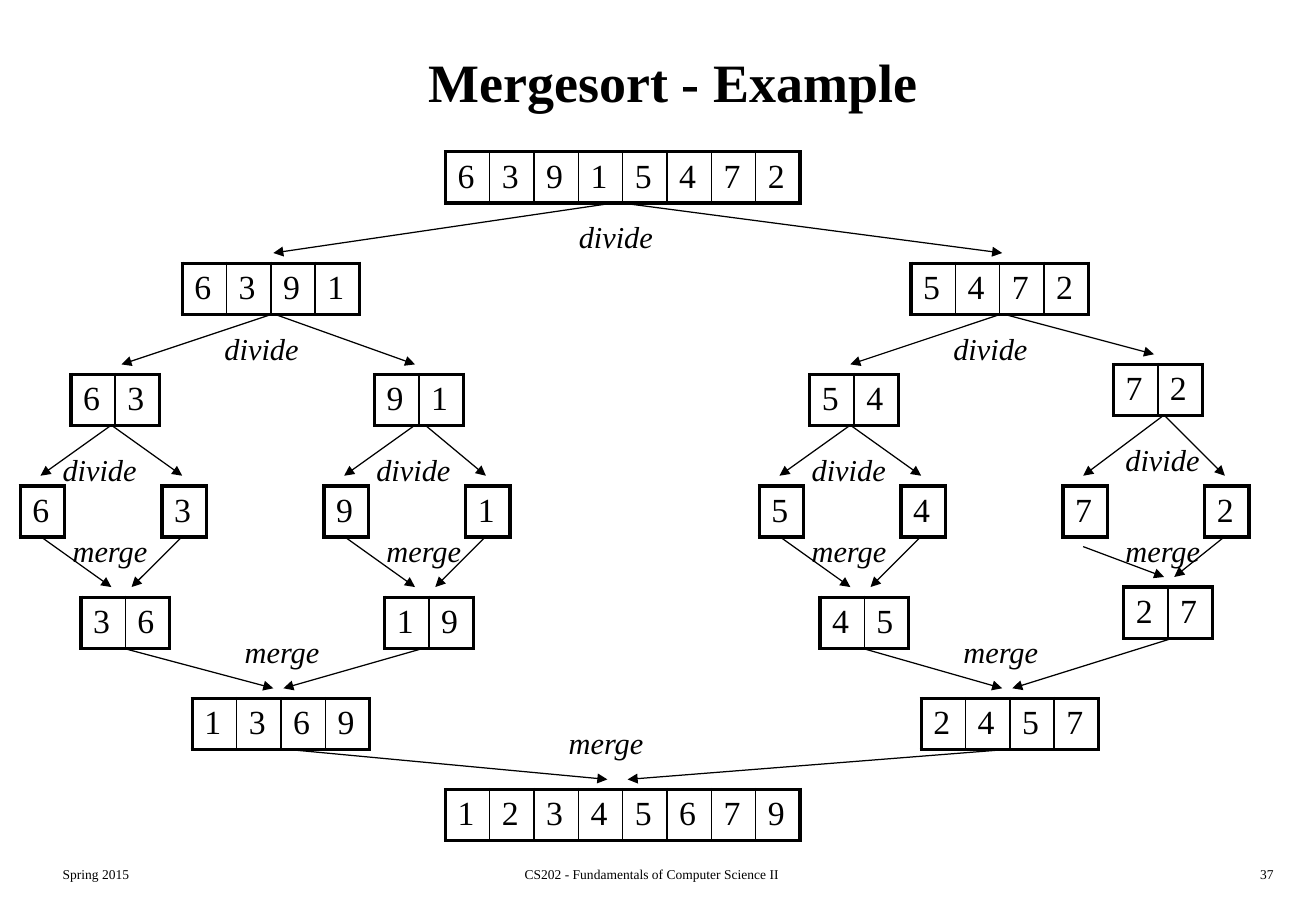
import pptx
import pptx.util
import pptx.dml.color
import pptx.enum.shapes
import pptx.enum.text
import pptx.oxml
import pptx.oxml.ns

# The slide is a grid of 130 columns by 90 rows, twelve to the inch
COLUMNS, ROWS = 130, 90
CELL_WIDTH, CELL_HEIGHT = 4.38, 5.05
BLACK = pptx.dml.color.RGBColor(0, 0, 0)
FONT = "Times New Roman"
OUTER, INNER = 2.25, 1
LEFT = pptx.enum.text.PP_ALIGN.LEFT
CENTER = pptx.enum.text.PP_ALIGN.CENTER
RIGHT = pptx.enum.text.PP_ALIGN.RIGHT

# Row: arrays as (column, digits)
ARRAYS = {
    15: [(44, "63915472")],
    26: [(18, "6391"), (90, "5472")],
    36: [(110, "72")],
    37: [(7, "63"), (37, "91"), (80, "54")],
    48: [(2, "6"), (16, "3"), (32, "9"), (46, "1"),
         (75, "5"), (89, "4"), (105, "7"), (119, "2")],
    58: [(111, "27")],
    59: [(8, "36"), (38, "19"), (81, "45")],
    69: [(19, "1369"), (91, "2457")],
    78: [(44, "12345679")],
}

# (start row, end row): arrows as (start column, end column)
ARROWS = {
    (20, 25): [(61, 27), (61, 99)],
    (31, 36): [(27, 12), (27, 41), (99, 84)],
    (31, 35): [(99, 114)],
    (42, 47): [(11, 4), (11, 18), (41, 34), (42, 48), (84, 77), (84, 91)],
    (41, 47): [(115, 107), (115, 121)],
    (53, 58): [(4, 11), (18, 13), (34, 41), (48, 43), (77, 84), (91, 86)],
    (54, 57): [(107, 115)],
    (53, 57): [(121, 116)],
    (64, 68): [(12, 27), (42, 28), (85, 99)],
    (63, 68): [(116, 100)],
    (74, 77): [(28, 60), (100, 62)],
}

# (word, row): columns
LABELS = {
    ("divide", 21): [56],
    ("divide", 32): [21, 93],
    ("divide", 43): [110],
    ("divide", 44): [5, 36, 79],
    ("merge", 52): [6, 37, 79, 110],
    ("merge", 62): [23, 94],
    ("merge", 71): [55],
}

# (text, column, width, alignment)
FOOTERS = [
    ("Spring 2015", 5, 27, LEFT),
    ("CS202 - Fundamentals of Computer Science II", 40, 48.8, CENTER),
    ("37", 100, 27, RIGHT),
]


def grid(*counts):
    return [pptx.util.Inches(count / 12) for count in counts]


def style(para, size, align=LEFT, bold=False, italic=False):
    para.alignment = align
    font = para.font
    font.name, font.size = FONT, pptx.util.Pt(size)
    font.bold, font.italic = bold, italic
    font.color.rgb = BLACK


def add_title(page, text):
    title = page.shapes.title
    title.left, title.top, title.width, title.height = grid(5, 2, 123, 12)
    title.text_frame.text = text
    title.text_frame.vertical_anchor = pptx.enum.text.MSO_ANCHOR.MIDDLE
    style(title.text_frame.paragraphs[0], 32, CENTER, bold=True)


def add_text(page, text, column, row, width, height, size, **look):
    box = page.shapes.add_textbox(*grid(column, row, width, height))
    box.text_frame.word_wrap = True
    box.text_frame.text = text
    style(box.text_frame.paragraphs[0], size, **look)


def add_border(cell, side, points):
    properties = cell._tc.get_or_add_tcPr()
    properties.append(pptx.oxml.parse_xml(
        f'<a:ln{side} {pptx.oxml.ns.nsdecls("a")} w="{pptx.util.Pt(points)}">'
        f'<a:solidFill><a:srgbClr val="{BLACK}"/></a:solidFill></a:ln{side}>'))


def add_array(page, digits, column, row):
    count = len(digits)
    frame = page.shapes.add_table(
        1, count, *grid(column, row, count * CELL_WIDTH, CELL_HEIGHT))
    table = frame.table
    table.first_row = table.horz_banding = False
    for index, digit in enumerate(digits):
        cell = table.cell(0, index)
        cell.text = digit
        style(cell.text_frame.paragraphs[0], 20)
        add_border(cell, "L", OUTER if index == 0 else INNER)
        add_border(cell, "R", OUTER if index == count - 1 else INNER)
        add_border(cell, "T", OUTER)
        add_border(cell, "B", OUTER)
        cell.fill.background()


def add_arrow(page, *ends):
    arrow = page.shapes.add_connector(
        pptx.enum.shapes.MSO_CONNECTOR.STRAIGHT, *grid(*ends))
    arrow.line.color.rgb = BLACK
    arrow.line.width = pptx.util.Pt(0.75)
    namespace = pptx.oxml.ns.nsdecls("a")
    arrow.element.xpath(".//a:ln")[0].append(
        pptx.oxml.parse_xml(f'<a:tailEnd {namespace} type="triangle"/>'))
    arrow.element.spPr.append(
        pptx.oxml.parse_xml(f'<a:effectLst {namespace}/>'))


def main():
    deck = pptx.Presentation()
    deck.slide_width, deck.slide_height = grid(COLUMNS, ROWS)
    page = deck.slides.add_slide(deck.slide_layouts.get_by_name("Title Only"))
    add_title(page, "Mergesort - Example")

    # Arrays at each step
    for row, arrays in ARRAYS.items():
        for column, digits in arrays:
            add_array(page, digits, column, row)

    # Arrows between steps
    for (start_row, end_row), arrows in ARROWS.items():
        for start, end in arrows:
            add_arrow(page, start, start_row, end, end_row)

    # Step names
    for (word, row), columns in LABELS.items():
        for column in columns:
            add_text(page, word, column, row, 12, 4.8, 18, italic=True)

    # Footer
    for text, column, width, align in FOOTERS:
        add_text(page, text, column, 85, width, 3, 8, align=align)

    deck.save("out.pptx")


if __name__ == "__main__":
    main()
